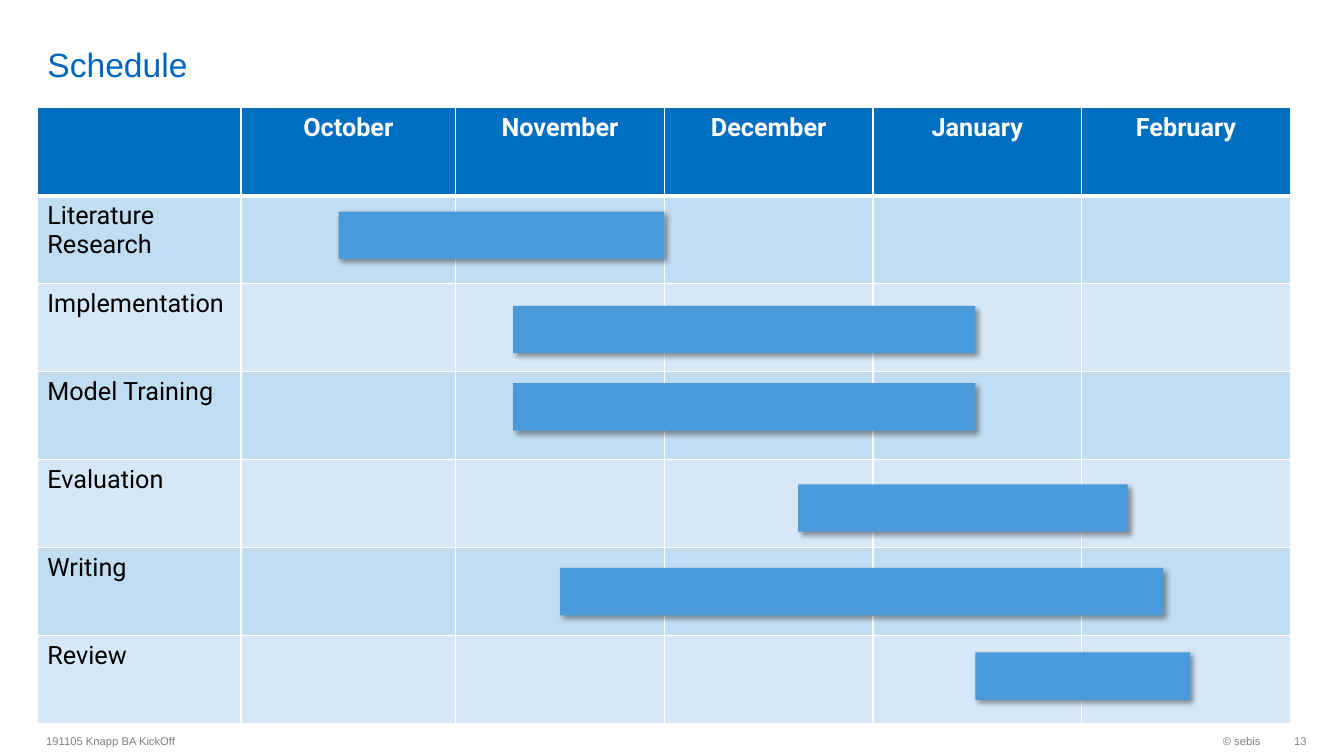
from itertools import accumulate
from lxml.etree import SubElement
from pptx import Presentation
from pptx.dml.color import RGBColor
from pptx.enum.shapes import MSO_SHAPE as Shape
from pptx.enum.text import MSO_ANCHOR as Anchor, PP_ALIGN as Align
from pptx.oxml.ns import qn
from pptx.util import Inches, Pt

TITLE = "Schedule"
MONTHS = ["October", "November", "December", "January", "February"]
# task, start and end in months, bar offset as a share of the row
TASKS = [
    ("Literature Research", 0.455, 2, 0.18),
    ("Implementation", 1.275, 3.49, 0.25),
    ("Model Training", 1.275, 3.49, 0.13),
    ("Evaluation", 2.64, 4.22, 0.28),
    ("Writing", 1.5, 4.39, 0.23),
    ("Review", 3.49, 4.52, 0.19),
]
FOOTERS = [
    ("191105 Knapp BA KickOff", 0.36, 6.3, Align.LEFT, 0.1),
    ("© sebis", 10.26, 2.34, Align.RIGHT, 0.1),
    ("13", 12.6, 0.36, Align.RIGHT, 0),
]
LEFT, TOP, HEIGHT = 0.37, 1.07, 6.11
COLS = [2.02, 2.13, 2.07, 2.07, 2.07, 2.07]
ROW = HEIGHT / (len(TASKS) + 1)
BAR = 0.47
BLUE, HEADER, BAR_FILL, GREY = "0065BD", "006FC2", "489ADA", "808080"
WHITE, BLACK, BANDS = "FFFFFF", "000000", ["C1DDF2", "D6E8F7"]


def rgb(value):
    return RGBColor.from_string(value)


def write(tf, text, size, font, color, align=Align.LEFT, bold=False):
    p = tf.paragraphs[0]
    p.alignment = align
    r = p.add_run()
    r.text = text
    r.font.size, r.font.name, r.font.bold = Pt(size), font, bold
    r.font.color.rgb = rgb(color)


def margins(tf, left, top, right, bottom):
    tf.margin_left, tf.margin_top = Inches(left), Inches(top)
    tf.margin_right, tf.margin_bottom = Inches(right), Inches(bottom)


def border(cell, side, width):
    tc_pr = cell._tc.get_or_add_tcPr()
    ln = SubElement(tc_pr, qn("a:ln" + side), w=str(Pt(width)))
    SubElement(SubElement(ln, qn("a:solidFill")), qn("a:srgbClr"), val=WHITE)


def add_schedule(s):
    rows = len(TASKS) + 1
    frame = s.shapes.add_table(rows, len(COLS), Inches(LEFT), Inches(TOP),
                               Inches(sum(COLS)), Inches(HEIGHT))
    table = frame.table
    for column, width in zip(table.columns, COLS):
        column.width = Inches(width)
    grid = [["", *MONTHS]] + [[task[0]] + [""] * len(MONTHS) for task in TASKS]
    for i, texts in enumerate(grid):
        table.rows[i].height = Inches(ROW)
        for j, text in enumerate(texts):
            cell = table.cell(i, j)
            for side in "LRTB":
                thick = (i, side) in [(0, "B"), (1, "T")]
                border(cell, side, 3 if thick else 1)
            cell.fill.solid()
            cell.fill.fore_color.rgb = rgb(BANDS[(i - 1) % 2] if i else HEADER)
            if text and i:
                write(cell.text_frame, text, 18, "Roboto", BLACK)
            elif text:
                write(cell.text_frame, text, 18, "Roboto", WHITE, Align.CENTER, True)


def add_shadow(sp):
    sp.shadow.inherit = False
    effects = sp._element.spPr.find(qn("a:effectLst"))
    shadow = SubElement(effects, qn("a:outerShdw"), blurRad=str(Pt(4)),
                        dist=str(Pt(3)), dir=str(45 * 60000), algn="tl", rotWithShape="0")
    color = SubElement(shadow, qn("a:srgbClr"), val=BLACK)
    SubElement(color, qn("a:alpha"), val="40000")


def add_bars(s):
    edges = list(accumulate(COLS, initial=LEFT))[1:]

    def month_x(month):
        i = int(month)
        return edges[i] + (month - i) * COLS[i + 1]

    for row, (_, start, end, offset) in enumerate(TASKS, 1):
        x = month_x(start)
        sp = s.shapes.add_shape(Shape.RECTANGLE, Inches(x), Inches(TOP + (row + offset) * ROW),
                                Inches(month_x(end) - x), Inches(BAR))
        sp.fill.solid()
        sp.fill.fore_color.rgb = rgb(BAR_FILL)
        sp.line.fill.background()
        add_shadow(sp)


def main():
    prs = Presentation()
    prs.slide_width, prs.slide_height = Inches(13.33), Inches(7.5)
    s = prs.slides.add_slide(prs.slide_layouts[5])

    title = s.shapes.title
    title.left, title.top = Inches(LEFT), Inches(0.05)
    title.width, title.height = Inches(11.58), Inches(0.79)
    tf = title.text_frame
    tf.vertical_anchor = Anchor.BOTTOM
    margins(tf, 0.1, 0, 0.1, 0)
    write(tf, TITLE, 24, "Arial", BLUE)

    for text, x, width, align, right in FOOTERS:
        box = s.shapes.add_textbox(Inches(x), Inches(7.19), Inches(width), Inches(0.32))
        tf = box.text_frame
        tf.word_wrap = True
        tf.vertical_anchor = Anchor.MIDDLE
        margins(tf, 0.1, 0.05, right, 0.05)
        write(tf, text, 8, "Arial", GREY, align)

    add_schedule(s)
    add_bars(s)
    prs.save("out.pptx")


if __name__ == "__main__":
    main()
